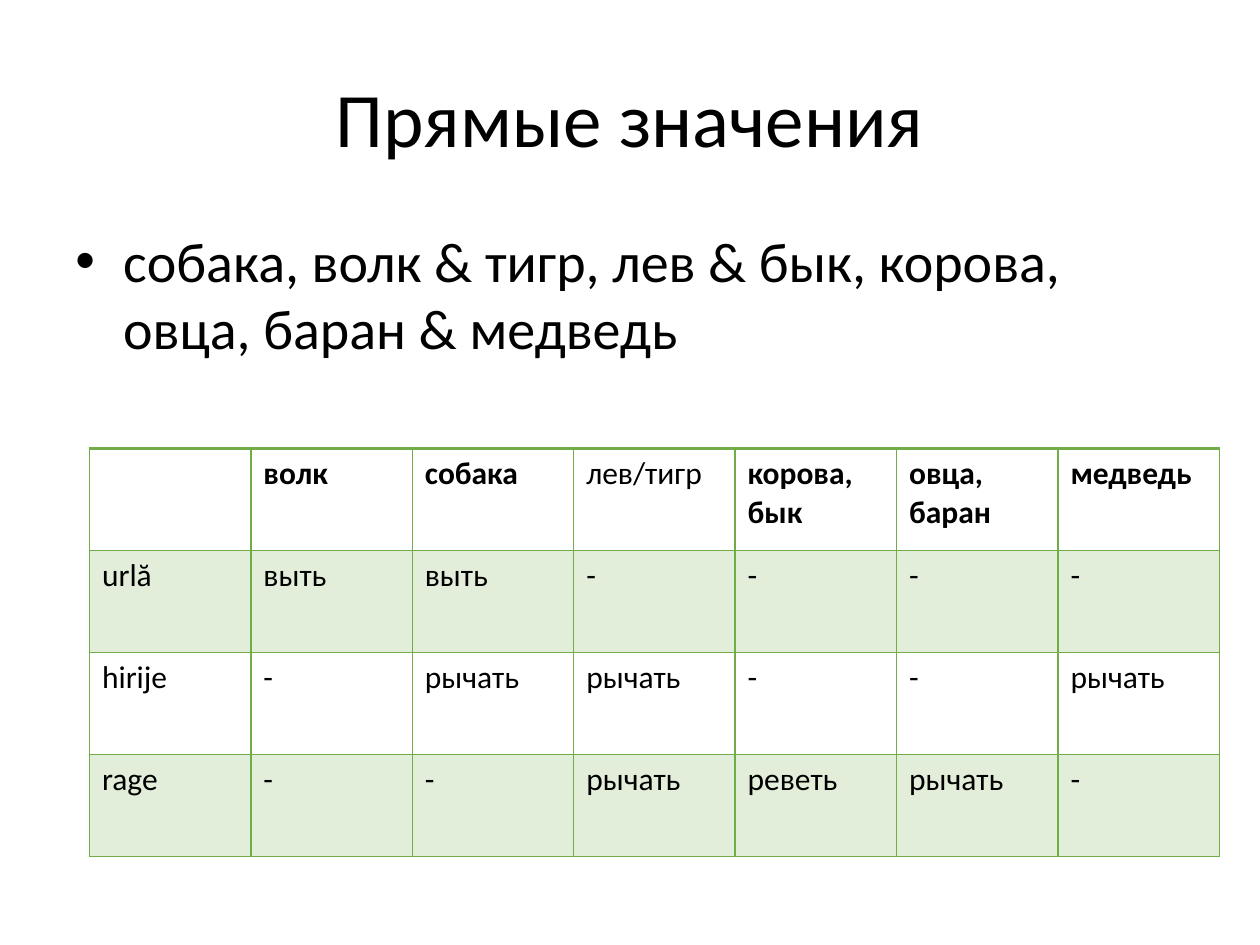
from lxml.etree import SubElement
from pptx import Presentation
from pptx.dml.color import RGBColor
from pptx.enum.text import MSO_ANCHOR, PP_ALIGN
from pptx.oxml.ns import qn
from pptx.util import Inches, Pt

BLACK = RGBColor(0x00, 0x00, 0x00)
GREEN = RGBColor(0x70, 0xAD, 0x47)
FONT = "Calibri"
BAND_ALPHA = 20

HEADER = ["", "волк", "собака", "лев/тигр", "корова, бык", "овца, баран", "медведь"]
ROWS = [
    HEADER,
    ["urlă", "выть", "выть", "-", "-", "-", "-"],
    ["hirije", "-", "рычать", "рычать", "-", "-", "рычать"],
    ["rage", "-", "-", "рычать", "реветь", "рычать", "-"],
]
PLAIN_HEADER = "лев/тигр"


def write_text(frame, text, size, bold=False, align=PP_ALIGN.LEFT):
    """Write one formatted paragraph into a text frame and return it."""
    para = frame.paragraphs[0]
    para.alignment = align
    span = para.add_run()
    span.text = text
    span.font.name = FONT
    span.font.size = Pt(size)
    span.font.bold = bold
    span.font.color.rgb = BLACK
    return para


def add_title(page, text, left, top, width, height):
    """Place and fill the title placeholder."""
    title = page.shapes.title
    title.left, title.top, title.width, title.height = left, top, width, height
    title.text_frame.vertical_anchor = MSO_ANCHOR.MIDDLE
    write_text(title.text_frame, text, 44, align=PP_ALIGN.CENTER)


def add_bullet(page, text, left, top, width, height):
    """Add a text box with one bulleted paragraph."""
    frame = page.shapes.add_textbox(left, top, width, height).text_frame
    frame.word_wrap = True
    para = write_text(frame, text, 32)
    para.space_before = Pt(6.4)
    properties = para._p.get_or_add_pPr()
    properties.set("marL", str(Inches(0.38)))
    properties.set("indent", str(-Inches(0.38)))
    SubElement(properties, qn("a:buFont"), typeface="Arial")
    SubElement(properties, qn("a:buChar"), char="•")


def set_borders(cell, top_width):
    """Draw green borders on all four sides of a cell."""
    properties = cell._tc.get_or_add_tcPr()
    for side in "LRTB":
        width = top_width if side == "T" else 1
        line = SubElement(properties, qn(f"a:ln{side}"), w=str(Pt(width)))
        fill = SubElement(line, qn("a:solidFill"))
        SubElement(fill, qn("a:srgbClr"), val=str(GREEN))


def fill_cell(cell, banded):
    """Give a banded cell a translucent green fill and others none."""
    if not banded:
        cell.fill.background()
        return
    cell.fill.solid()
    cell.fill.fore_color.rgb = GREEN
    color = cell._tc.tcPr.find(f"{qn('a:solidFill')}/{qn('a:srgbClr')}")
    SubElement(color, qn("a:alpha"), val=str(BAND_ALPHA * 1000))


def add_verb_table(page, rows, left, top, width, height):
    """Add the table of verbs by animal with equal rows and columns."""
    frame = page.shapes.add_table(len(rows), len(rows[0]), left, top, width, height)
    table = frame.table
    for row_index, row in enumerate(rows):
        is_header = row_index == 0
        for column_index, text in enumerate(row):
            cell = table.cell(row_index, column_index)
            set_borders(cell, top_width=2 if is_header else 1)
            fill_cell(cell, banded=row_index % 2 == 1)
            bold = is_header and text != PLAIN_HEADER
            write_text(cell.text_frame, text, 18, bold=bold)


def main():
    """Build and save the deck."""
    deck = Presentation()
    deck.slide_width, deck.slide_height = Inches(10), Inches(7.5)
    page = deck.slides.add_slide(deck.slide_layouts[5])
    add_title(page, "Прямые значения",
              Inches(0.5), Inches(0.3), Inches(9), Inches(1.25))
    add_bullet(page, "собака, волк & тигр, лев & бык, корова, овца, баран & медведь",
               Inches(0.5), Inches(1.75), Inches(9), Inches(4.95))
    add_verb_table(page, ROWS,
                   Inches(0.71), Inches(3.56), Inches(8.97), Inches(3.24))
    deck.save("out.pptx")


if __name__ == "__main__":
    main()
